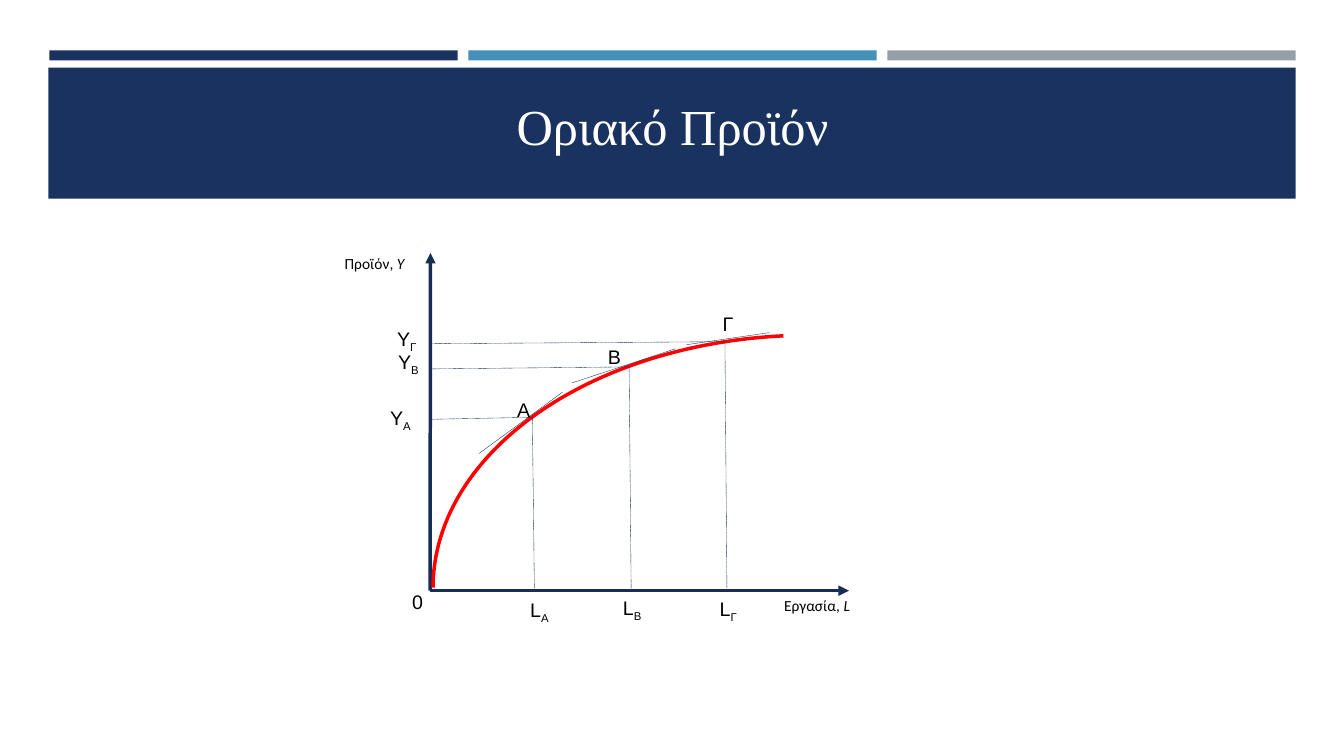
from pptx import Presentation
from pptx.dml.color import RGBColor
from pptx.enum.dml import MSO_LINE
from pptx.enum.shapes import MSO_CONNECTOR, MSO_SHAPE
from pptx.enum.text import MSO_ANCHOR, PP_ALIGN
from pptx.oxml.ns import qn
from pptx.util import Inches, Pt
from lxml.etree import SubElement

HUES = {"navy": "1A3260", "blue": "4590B8", "gray": "969FA7",
        "ink": "172D56", "red": "FF0000", "black": "000000", "white": "FFFFFF"}
TINT = {name: RGBColor.from_string(code) for name, code in HUES.items()}
CELL = Inches(0.1)  # side of one square of the slide's grid


def write(frame, text, tail="", font="Arial", size=14, color="black",
          align=PP_ALIGN.LEFT, slant=False):
    """Fill a frame; the tail is italic if slant is set, else a subscript."""
    frame.word_wrap = True
    line = frame.paragraphs[0]
    line.alignment = align
    for part in filter(None, (text, tail)):
        run = line.add_run()
        run.text = part
        run.font.name = font
        run.font.size = Pt(size)
        run.font.color.rgb = TINT[color]
    if tail and slant:
        run.font.italic = True
    elif tail:
        run.font._element.set("baseline", "-25000")


def draw(start, end, width=0.25, dash=None, arrow=False):
    """Join two grid points with a straight line."""
    ends = [round(n * CELL) for n in (*start, *end)]
    rule = slide.shapes.add_connector(MSO_CONNECTOR.STRAIGHT, *ends)
    rule.line.color.rgb = TINT["ink"]
    rule.line.width = Pt(width)
    rule.line.dash_style = dash
    if arrow:
        SubElement(rule.line._get_or_add_ln(), qn("a:tailEnd"), type="triangle")
    SubElement(rule._element.spPr, qn("a:effectLst"))


deck = Presentation()
deck.slide_width, deck.slide_height = Inches(13.33), Inches(7.5)
slide = deck.slides.add_slide(deck.slide_layouts[5])
shapes = slide.shapes

# Header bands, with the title on top
bands = [(4.9 + 41.55 * i, 5, 40.5, 1, hue)
         for i, hue in enumerate(("navy", "blue", "gray"))]
bands.append((4.8, 6.7, 123.7, 13, "navy"))
for *box, hue in bands:
    band = shapes.add_shape(MSO_SHAPE.RECTANGLE, *(round(n * CELL) for n in box))
    band.shadow.inherit = False
    band.fill.solid()
    band.fill.fore_color.rgb = TINT[hue]
    band.line.fill.background()

title = shapes.title
title.left, title.top, title.width, title.height = (
    round(n * CELL) for n in (6.4, 7.7, 120.6, 8.2))
title.text_frame.vertical_anchor = MSO_ANCHOR.BOTTOM
write(title.text_frame, "Οριακό Προϊόν", font="Times New Roman", size=36,
      color="white", align=PP_ALIGN.CENTER)
title.element.getparent().append(title.element)

# Axes and product curve
zero = (42.65, 58.6)
draw(zero, (42.7, 25.1), width=2.5, arrow=True)
draw(zero, (84.2, 58.6), width=2.5, arrow=True)

curve = shapes.add_shape(
    MSO_SHAPE.ARC, *(round(n * CELL) for n in (55.3, 20.9, 50.1, 74.8)))
curve.rotation = 270
curve.adjustments[0] = 162
curve.adjustments[1] = 212.369
curve.shadow.inherit = False
curve.fill.background()
curve.line.color.rgb = TINT["red"]
curve.line.width = Pt(2.5)

# Guides from each point to both axes, and its tangent
points = [((52.8, 41.4), (47.5, 45), (55.8, 38.9)),
          ((62.4, 36.4), (56.7, 38), (67, 34.6)),
          ((71.9, 33.9), (68.1, 34.2), (76.3, 33))]
for (x, y), start, end in points:
    draw((x, y), (x + 0.2, 58.4), dash=MSO_LINE.SQUARE_DOT)
    draw((x, y), (zero[0], y + 0.2), dash=MSO_LINE.SQUARE_DOT)
    draw(start, end)

# Labels: left, top, text, subscript
labels = [(50.3, 39, "Α", ""), (59.3, 33.7, "Β", ""), (70.7, 30.5, "Γ", ""),
          (51.6, 58.8, "L", "A"), (60.8, 58.6, "L", "B"), (70.4, 58.7, "L", "Γ"),
          (37.7, 39.8, "Υ", "A"), (38.5, 34.2, "Υ", "Β"), (38.4, 31.9, "Υ", "Γ"),
          (39.9, 58, "0", "")]
for x, y, text, sub in labels:
    box = shapes.add_textbox(*(round(n * CELL) for n in (x, y, 5, 3.4)))
    write(box.text_frame, text, sub)

for x, y, text, sign in [(29.3, 24.7, "Προϊόν, ", "Υ"), (73.5, 58.6, "Εργασία, ", "L")]:
    box = shapes.add_textbox(*(round(n * CELL) for n in (x, y, 11.8, 2.9)))
    write(box.text_frame, text, sign, font="Calibri", size=11,
          align=PP_ALIGN.RIGHT, slant=True)

deck.save("out.pptx")
